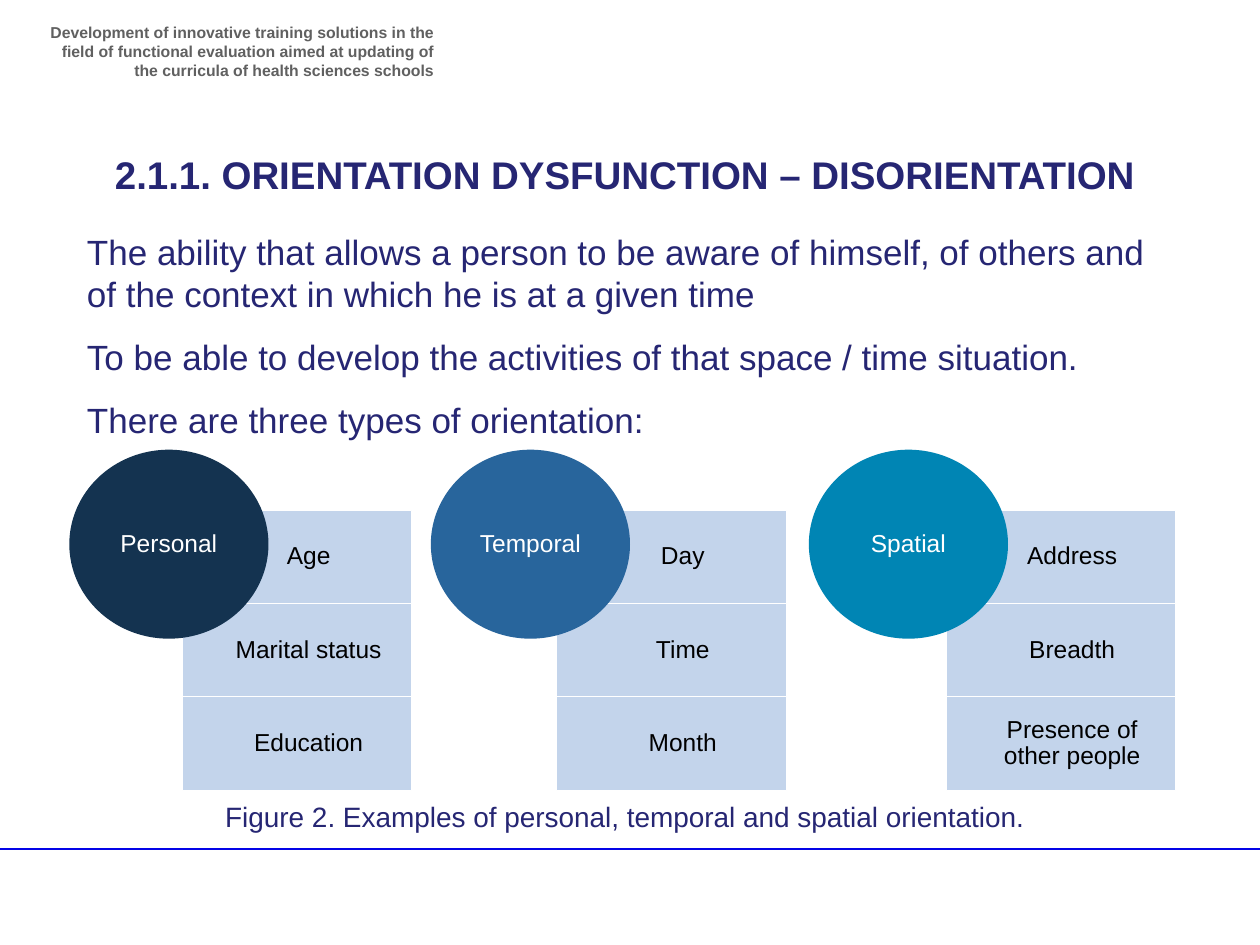
from lxml import etree
from pptx import Presentation
from pptx.dml.color import RGBColor
from pptx.enum import shapes, text
from pptx.oxml import ns
from pptx.util import Pt

COLORS = {
    "navy": "262673", "gray": "606060", "rule": "0404E6", "cell": "BDD0E9",
    "personal": "143350", "temporal": "28659C", "spatial": "0085B4",
    "white": "FFFFFF", "black": "000000",
}
CENTER = text.PP_ALIGN.CENTER


def color(name):
    return RGBColor.from_string(COLORS[name])


def add_text(paragraph, words, size, color_name, alignment, bold=False):
    paragraph.alignment = alignment
    run = paragraph.add_run()
    run.text = words
    run.font.name = "Arial"
    run.font.size = Pt(size)
    run.font.bold = bold
    run.font.color.rgb = color(color_name)


presentation = Presentation()
presentation.slide_width, presentation.slide_height = Pt(720), Pt(540)
slide = presentation.slides.add_slide(presentation.slide_layouts[1])

# Footer rule
rule = slide.shapes.add_connector(
    shapes.MSO_CONNECTOR.STRAIGHT, Pt(-3.6), Pt(485.3), Pt(720), Pt(485.3))
rule.line.color.rgb = color("rule")
rule.line.width = Pt(1)
etree.SubElement(rule._element.spPr, ns.qn("a:effectLst"))

# Project name and figure caption
for left, top, width, height, words, size, color_name, alignment, bold in [
    (20.2, 9.4, 234.7, 33.8,
     "Development of innovative training solutions in the ﬁeld of functional "
     "evaluation aimed at updating of the curricula of health sciences schools",
     9, "gray", text.PP_ALIGN.RIGHT, True),
    (39.6, 453.6, 635, 26.6,
     "Figure 2. Examples of personal, temporal and spatial orientation.",
     16, "navy", CENTER, False),
]:
    box = slide.shapes.add_textbox(Pt(left), Pt(top), Pt(width), Pt(height))
    box.text_frame.word_wrap = True
    add_text(box.text_frame.paragraphs[0], words, size, color_name, alignment, bold)

# Title and body
title, body = slide.shapes.title, slide.placeholders[1]
for placeholder, left, top, width, height in [
    (title, 48.2, 82.8, 617.8, 33.8),
    (body, 42.5, 128.2, 629.3, 128.2),
]:
    placeholder.left, placeholder.top = Pt(left), Pt(top)
    placeholder.width, placeholder.height = Pt(width), Pt(height)
    placeholder.text_frame.auto_size = text.MSO_AUTO_SIZE.NONE
    placeholder.text_frame.vertical_anchor = text.MSO_ANCHOR.TOP

add_text(title.text_frame.paragraphs[0],
         "2.1.1. ORIENTATION DYSFUNCTION – DISORIENTATION", 22, "navy", CENTER, True)

for index, words in enumerate([
    "The ability that allows a person to be aware of himself, of others and "
    "of the context in which he is at a given time",
    "To be able to develop the activities of that space / time situation.",
    "There are three types of orientation:",
]):
    frame = body.text_frame
    paragraph = frame.add_paragraph() if index else frame.paragraphs[0]
    properties = paragraph._p.get_or_add_pPr()
    properties.set("marL", "0")
    properties.set("indent", "0")
    etree.SubElement(properties, ns.qn("a:buNone"))
    paragraph.space_before = Pt(12 if index else 0)
    add_text(paragraph, words, 20, "navy", text.PP_ALIGN.LEFT)

# Orientation types: a column of examples behind each circle
CELL_WIDTH, CELL_HEIGHT, CELL_TOP = 131, 53.3, 291.6
for name, circle_left, cell_left, examples in [
    ("Personal", 39.6, 104.4, ["Age", "Marital status", "Education"]),
    ("Temporal", 246.2, 318.2, ["Day", "Time", "Month"]),
    ("Spatial", 462.2, 540.7, ["Address", "Breadth", "Presence of other people"]),
]:
    items = [
        (shapes.MSO_SHAPE.RECTANGLE, cell_left, CELL_TOP + row * CELL_HEIGHT,
         CELL_WIDTH, CELL_HEIGHT, "cell", example, "black", (20.9, 7.9, 7.9, 7.9))
        for row, example in enumerate(examples)
    ]
    items.append((shapes.MSO_SHAPE.OVAL, circle_left, 257, 113.8, 108,
                  name.lower(), name, "white", (0, 0, 0, 0)))
    for kind, left, top, width, height, fill, words, ink, margins in items:
        shape = slide.shapes.add_shape(kind, Pt(left), Pt(top), Pt(width), Pt(height))
        shape.shadow.inherit = False
        shape.fill.solid()
        shape.fill.fore_color.rgb = color(fill)
        if fill == "cell":
            shape.line.color.rgb = color("white")
            shape.line.width = Pt(0.5)
            fill_color = shape._element.spPr.find(ns.qn("a:solidFill"))[0]
            etree.SubElement(fill_color, ns.qn("a:alpha"), val="90000")
        else:
            shape.line.fill.background()
        frame = shape.text_frame
        frame.word_wrap = True
        frame.vertical_anchor = text.MSO_ANCHOR.MIDDLE
        (frame.margin_left, frame.margin_top,
         frame.margin_right, frame.margin_bottom) = map(Pt, margins)
        frame.paragraphs[0].line_spacing = 0.9
        add_text(frame.paragraphs[0], words, 14, ink, CENTER)

presentation.save("out.pptx")
